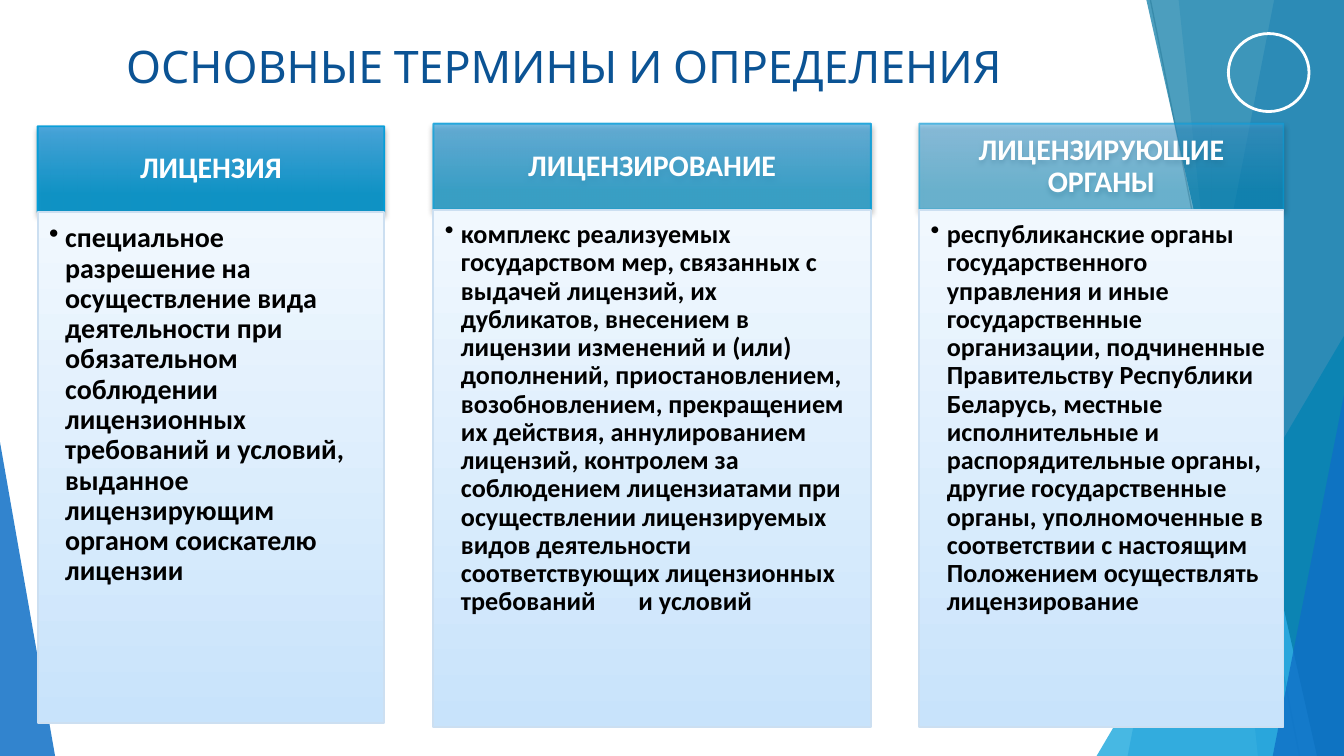
from dataclasses import dataclass

from lxml import etree
from pptx import Presentation
from pptx import util as u
from pptx.dml.color import RGBColor
from pptx.enum import shapes, text
from pptx.oxml import ns

# The grid has square cells: 100 columns by 56.25 rows
COLS, ROWS = 100, 56.25
CELL = u.Inches(0.1)
RECT = shapes.MSO_SHAPE.RECTANGLE
TRI = shapes.MSO_SHAPE.ISOSCELES_TRIANGLE
OVAL = shapes.MSO_SHAPE.OVAL


@dataclass(frozen=True)
class Theme:
    head: str = "Karla"
    body: str = "Calibri"
    title: int = 24
    label: int = 16
    blue: str = "0F6FC6"
    sky: str = "009DD9"
    teal: str = "0076A3"
    navy: str = "0B5394"
    white: str = "FFFFFF"
    black: str = "000000"
    gray: str = "BFBFBF"
    edge: str = "CCDFF1"
    deep: tuple = ((0, "3FA2DB"), (0.78, "0090C7"))
    pale: tuple = ((0, "F1F8FE"), (1, "C8E3FB"))


def cells(*nums):
    return [round(n * CELL) for n in nums]


def add(node, tag, **attrs):
    return etree.SubElement(node, ns.qn(tag), attrs)


def fade(node, pct):
    """Set the opacity of every colour below a node."""
    for clr in node.iter(ns.qn("a:srgbClr")):
        add(clr, "a:alpha", val=str(pct * 1000))


class Deck:
    def __init__(self, theme):
        self.theme = theme
        self.prs = Presentation()
        self.prs.slide_width, self.prs.slide_height = cells(COLS, ROWS)
        self.slide = self.prs.slides.add_slide(self.prs.slide_layouts[6])
        self.items = self.slide.shapes

    def stroke(self, line, color, width):
        line.color.rgb = RGBColor.from_string(color)
        line.width = u.Pt(width)

    def paint(self, shape, color, pct):
        shape.shadow.inherit = False
        shape.line.fill.background()
        shape.fill.solid()
        shape.fill.fore_color.rgb = RGBColor.from_string(color)
        fade(shape._element.spPr, pct)

    def rule(self, start, end, color, width):
        line = self.items.add_connector(
            shapes.MSO_CONNECTOR.STRAIGHT, *cells(*start, *end))
        self.stroke(line.line, color, width)
        add(line._element.spPr, "a:effectLst")

    def facet(self, points, color, pct):
        first, *rest = [cells(*p) for p in points]
        pen = self.items.build_freeform(*first)
        pen.add_line_segments(rest, close=True)
        self.paint(pen.convert_to_shape(), color, pct)

    def wedge(self, box, tip, color, pct):
        shape = self.items.add_shape(TRI, *cells(*box))
        shape.adjustments[0] = tip
        self.paint(shape, color, pct)

    def ring(self, box, color, width):
        shape = self.items.add_shape(OVAL, *cells(*box))
        shape.shadow.inherit = False
        shape.fill.background()
        self.stroke(shape.line, color, width)

    def panel(self, box, stops, edge, pct, shade=False):
        shape = self.items.add_shape(RECT, *cells(*box))
        shape.shadow.inherit = False
        shape.fill.gradient()
        shape.fill.gradient_angle = 270
        for stop, (pos, color) in zip(shape.fill.gradient_stops, stops):
            stop.position = pos
            stop.color.rgb = RGBColor.from_string(color)
        self.stroke(shape.line, edge, 1)
        props = shape._element.spPr
        fade(props, pct)
        if shade:
            cast = add(props.find(ns.qn("a:effectLst")), "a:outerShdw",
                       blurRad=str(u.Pt(3)), dist=str(u.Pt(2)),
                       dir="5400000", rotWithShape="0")
            add(cast, "a:srgbClr", val=self.theme.black)
            fade(cast, 35)
        return shape

    def label(self, shape, words, face, size, color, bold=True, pad=None,
              mid=False, item=False, tab=None):
        frame = shape.text_frame
        frame.word_wrap = True
        frame.vertical_anchor = (text.MSO_ANCHOR.MIDDLE if mid
                                 else text.MSO_ANCHOR.TOP)
        if pad:
            (frame.margin_left, frame.margin_top,
             frame.margin_right, frame.margin_bottom) = cells(*pad)
        para = frame.paragraphs[0]
        para.text = words
        para.alignment = text.PP_ALIGN.LEFT if item else text.PP_ALIGN.CENTER
        para.line_spacing = 0.9 if bold else 1.0
        if item:
            props = para._p.get_or_add_pPr()
            inset = u.Inches(0.12)
            props.set("marL", str(inset))
            props.set("indent", str(-inset))
            add(props, "a:buChar", char="•")
            if tab:
                stops = add(props, "a:tabLst")
                add(stops, "a:tab", pos=str(round(tab * CELL)), algn="l")
        font = para.font
        font.name, font.size, font.bold = face, u.Pt(size), bold
        font.color.rgb = RGBColor.from_string(color)

    def title(self, box, words):
        t = self.theme
        shape = self.items.add_textbox(*cells(*box))
        self.label(shape, words, t.head, t.title, t.navy, bold=False)

    def card(self, left, top, width, depth, pct, size, name, words, tab=None):
        t = self.theme
        tall = 6.4
        head = self.panel((left, top, width, tall), t.deep, t.sky, pct, True)
        self.label(head, name, t.body, t.label, t.white, mid=True,
                   pad=(1.2, 0.7, 1.2, 0.7))
        body = self.panel((left, top + tall, width, depth),
                          t.pale, t.edge, 100)
        self.label(body, words, t.body, size, t.black, item=True,
                   pad=(0.85, 0.85, 1.15, 1.25), tab=tab)


def main():
    t = Theme()
    deck = Deck(t)

    # Backdrop
    deck.rule((85.6, 0), (96.7, ROWS), t.gray, 0.75)
    deck.facet([(94.8, 0), (COLS, 0), (COLS, ROWS), (83.9, ROWS)], t.blue, 30)
    deck.facet([(87.7, 0), (COLS, 0), (COLS, ROWS), (93.6, ROWS)], t.blue, 20)
    deck.wedge((81.6, 25, 18.4, 31.25), 1, t.sky, 72)
    deck.facet([(85.3, 0), (COLS, 0), (COLS, ROWS), (98, ROWS)], t.teal, 70)
    deck.wedge((94.7, 29.4, 5.3, 26.85), 1, t.blue, 80)
    deck.wedge((0, 32.9, 4.1, 23.35), 0, t.blue, 85)
    deck.ring((91.4, 2.5, 6, 5.8), t.white, 1.5)

    # Title
    deck.title((0, 2.4, 83.9, 5), "ОСНОВНЫЕ ТЕРМИНЫ И ОПРЕДЕЛЕНИЯ")

    # Cards: left, top, width, body depth, header opacity, text size
    deck.card(
        2.8, 9.4, 25.8, 38, 90, 15, "ЛИЦЕНЗИЯ",
        "специальное разрешение на осуществление вида деятельности при "
        "обязательном соблюдении лицензионных требований и условий, "
        "выданное лицензирующим органом соискателю лицензии")
    deck.card(
        32.25, 9.2, 32.55, 38.5, 70, 14, "ЛИЦЕНЗИРОВАНИЕ",
        "комплекс реализуемых государством мер, связанных с выдачей "
        "лицензий, их дубликатов, внесением в лицензии изменений и (или) "
        "дополнений, приостановлением, возобновлением, прекращением их "
        "действия, аннулированием лицензий, контролем за соблюдением "
        "лицензиатами при осуществлении лицензируемых видов деятельности "
        "соответствующих лицензионных требований\tи условий", tab=14.4)
    deck.card(
        68.4, 9.2, 27.1, 38.5, 50, 14, "ЛИЦЕНЗИРУЮЩИЕ ОРГАНЫ",
        "республиканские органы государственного управления и иные "
        "государственные организации, подчиненные Правительству Республики "
        "Беларусь, местные исполнительные и распорядительные органы, другие "
        "государственные органы, уполномоченные в соответствии с настоящим "
        "Положением осуществлять лицензирование")

    deck.prs.save("out.pptx")


if __name__ == "__main__":
    main()
